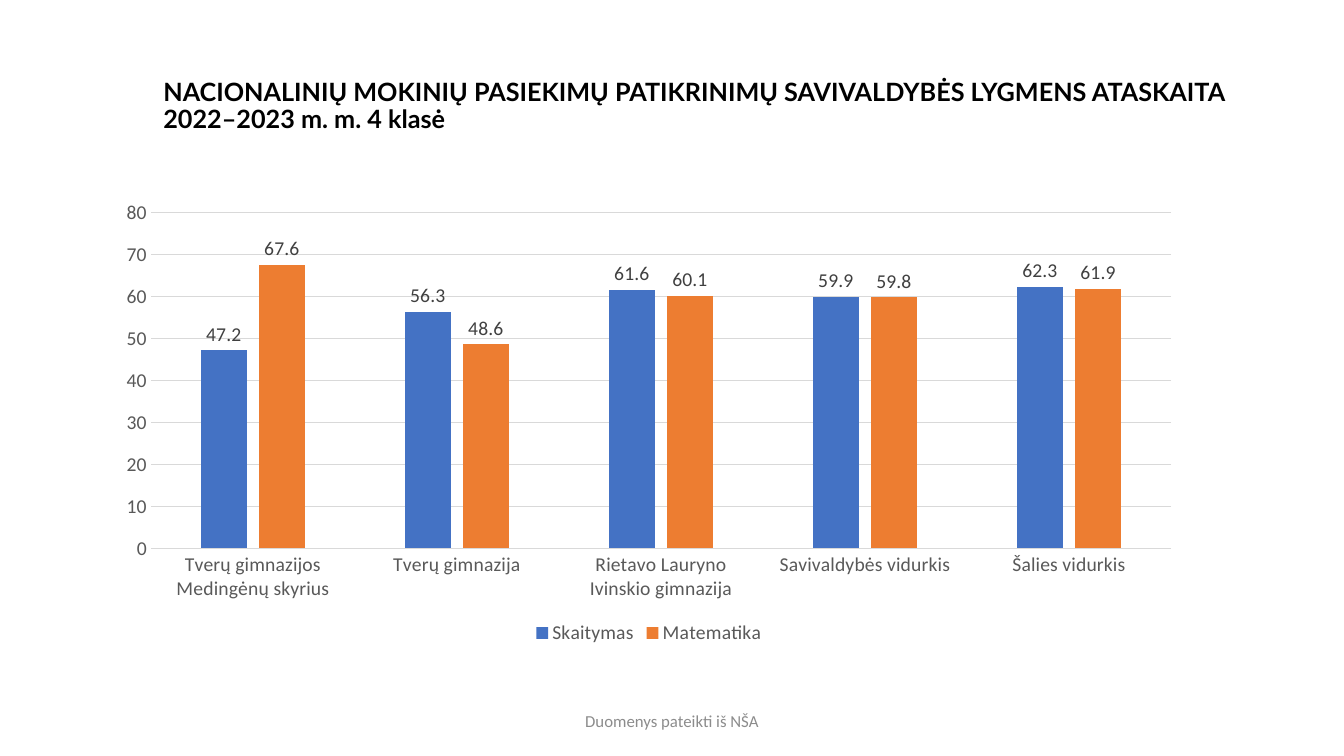
import pptx
import pptx.chart.data
import pptx.dml.color
import pptx.enum.chart
import pptx.enum.text
import pptx.util

# Content
TITLE = ("NACIONALINIŲ MOKINIŲ PASIEKIMŲ PATIKRINIMŲ SAVIVALDYBĖS LYGMENS ATASKAITA\v"
         "2022–2023 m. m. 4 klasė")
FOOTER = "Duomenys pateikti iš NŠA"
SCHOOLS = ["Tverų gimnazijos Medingėnų skyrius", "Tverų gimnazija",
           "Rietavo Lauryno Ivinskio gimnazija", "Savivaldybės vidurkis",
           "Šalies vidurkis"]
SUBJECTS = [
    ("Skaitymas", "4472C4", [47.2, 56.3, 61.6, 59.9, 62.3]),
    ("Matematika", "ED7D31", [67.6, 48.6, 60.1, 59.8, 61.9]),
]
GRID_COLOR, AXIS_TEXT, LABEL_TEXT = "D9D9D9", "595959", "404040"

# Layout: left, top, width, height in inches
SLIDE_WIDTH, SLIDE_HEIGHT = 13.33, 7.5
TITLE_BOX = (1.52, 0.47, 11, 1.18)
CHART_BOX = (1.04, 1.9, 10.79, 4.54)
FOOTER_WIDTH = 4.5
FOOTER_BOX = ((SLIDE_WIDTH - FOOTER_WIDTH) / 2, 6.95, FOOTER_WIDTH, 0.4)


def rgb(color):
    return pptx.dml.color.RGBColor.from_string(color)


def inches(box):
    return [pptx.util.Inches(length) for length in box]


def style_font(font, size, color, name="Calibri", bold=False):
    font.size, font.name, font.bold = pptx.util.Pt(size), name, bold
    font.color.rgb = rgb(color)


def style_line(line):
    line.color.rgb = rgb(GRID_COLOR)
    line.width = pptx.util.Pt(0.75)


def write(shape, text, **font):
    frame = shape.text_frame
    frame.word_wrap = True
    frame.auto_size = pptx.enum.text.MSO_AUTO_SIZE.NONE
    frame.vertical_anchor = pptx.enum.text.MSO_ANCHOR.MIDDLE
    paragraph = frame.paragraphs[0]
    paragraph.text = text
    style_font(paragraph.font, **font)
    return paragraph


presentation = pptx.Presentation()
presentation.slide_width, presentation.slide_height = inches((SLIDE_WIDTH, SLIDE_HEIGHT))
slide = presentation.slides.add_slide(presentation.slide_layouts[5])

# Title
title = slide.shapes.title
title.left, title.top, title.width, title.height = inches(TITLE_BOX)
heading = write(title, TITLE, size=18, color="000000", name="Lato", bold=True)
heading.alignment = pptx.enum.text.PP_ALIGN.LEFT
heading.line_spacing = 0.9

# Data source
footer = slide.shapes.add_textbox(*inches(FOOTER_BOX))
source = write(footer, FOOTER, size=12, color="8C8C8C")
source.alignment = pptx.enum.text.PP_ALIGN.CENTER

# Chart
data = pptx.chart.data.CategoryChartData()
data.categories = SCHOOLS
for subject, _, scores in SUBJECTS:
    data.add_series(subject, scores)
chart = slide.shapes.add_chart(
    pptx.enum.chart.XL_CHART_TYPE.COLUMN_CLUSTERED, *inches(CHART_BOX), data).chart
style_font(chart.font, 14, "000000")
chart.has_title = False
chart.has_legend = True
chart.legend.position = pptx.enum.chart.XL_LEGEND_POSITION.BOTTOM
chart.legend.include_in_layout = False
style_font(chart.legend.font, 14, AXIS_TEXT)

# Axes
for axis in (chart.category_axis, chart.value_axis):
    axis.major_tick_mark = axis.minor_tick_mark = pptx.enum.chart.XL_TICK_MARK.NONE
    style_font(axis.tick_labels.font, 14, AXIS_TEXT)
style_line(chart.category_axis.format.line)
chart.value_axis.format.line.fill.background()
chart.value_axis.minimum_scale, chart.value_axis.maximum_scale = 0, 80
chart.value_axis.major_unit = 10
chart.value_axis.has_major_gridlines = True
style_line(chart.value_axis.major_gridlines.format.line)

# Columns
plot = chart.plots[0]
plot.gap_width, plot.overlap, plot.vary_by_categories = 219, -27, False
for series, (_, color, _) in zip(plot.series, SUBJECTS):
    series.format.fill.solid()
    series.format.fill.fore_color.rgb = rgb(color)
    labels = series.data_labels
    labels.show_value = True
    labels.position = pptx.enum.chart.XL_LABEL_POSITION.OUTSIDE_END
    style_font(labels.font, 14, LABEL_TEXT)

presentation.save("out.pptx")
